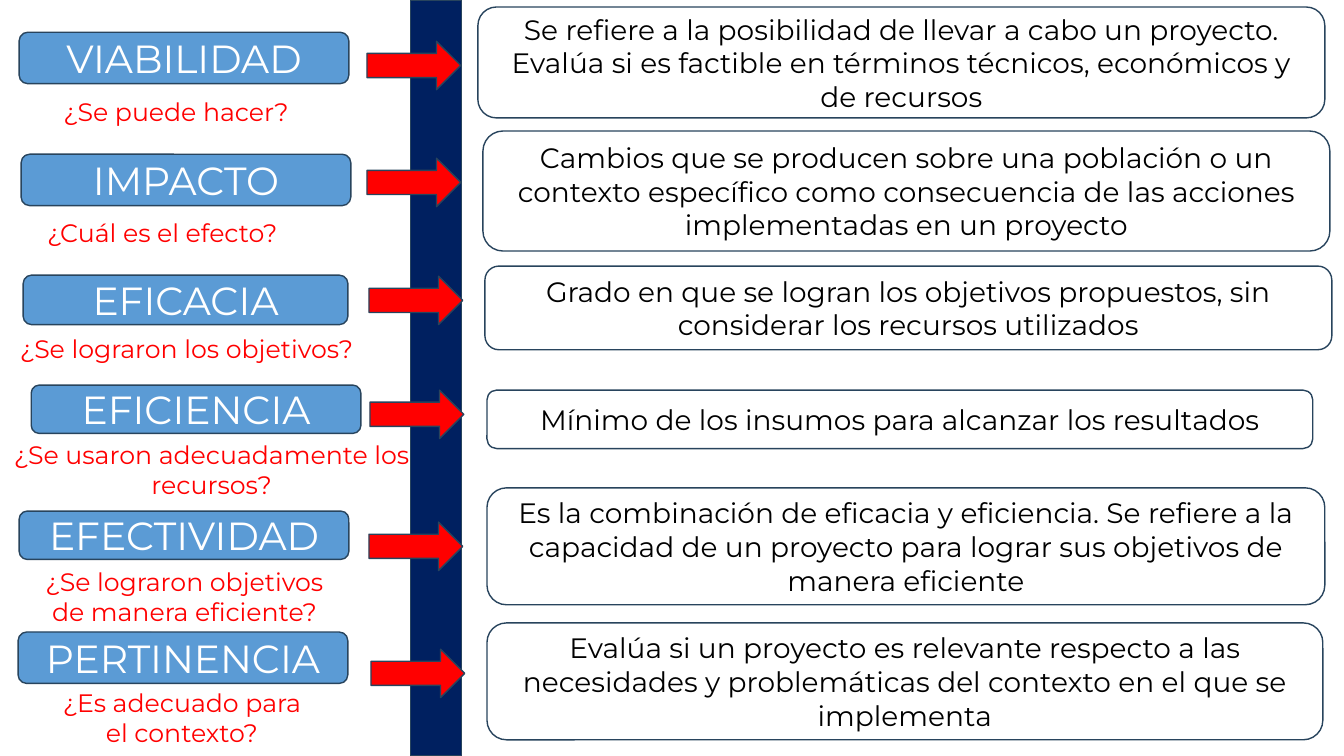
from dataclasses import dataclass

from pptx import Presentation
from pptx.dml.color import RGBColor
from pptx.enum import shapes, text
from pptx.util import Inches, Pt

CENTER = text.PP_ALIGN.CENTER
LEFT = text.PP_ALIGN.LEFT

CRITERIA = [
    {
        "name": ("VIABILIDAD", (0.19, 0.32, 3.27, 0.51)),
        "question": ("¿Se puede hacer?", (0.53, 0.91, 2.71, 0.4), LEFT),
        "meaning": (
            "Se refiere a la posibilidad de llevar a cabo un proyecto. "
            "Evalúa si es factible en términos técnicos, económicos y de recursos",
            (4.74, 0.07, 8.4, 1.1),
        ),
        "arrow": (3.64, 0.41),
    },
    {
        "name": ("IMPACTO", (0.21, 1.53, 3.27, 0.51)),
        "question": ("¿Cuál es el efecto?", (0.37, 2.11, 2.88, 0.4), LEFT),
        "meaning": (
            "Cambios que se producen sobre una población o un contexto específico "
            "como consecuencia de las acciones implementadas en un proyecto",
            (4.79, 1.3, 8.4, 1.19),
        ),
        "arrow": (3.64, 1.57),
    },
    {
        "name": ("EFICACIA", (0.23, 2.73, 3.22, 0.49)),
        "question": ("¿Se lograron los objetivos?", (0.1, 3.26, 3.97, 0.4), LEFT),
        "meaning": (
            "Grado en que se logran los objetivos propuestos, "
            "sin considerar los recursos utilizados",
            (4.81, 2.64, 8.4, 0.83),
        ),
        "arrow": (3.66, 2.74),
    },
    {
        "name": ("EFICIENCIA", (0.31, 3.82, 3.27, 0.48)),
        "question": ("¿Se usaron adecuadamente los recursos?", (0, 4.31, 4.2, 0.71), CENTER),
        "meaning": (
            "Mínimo de los insumos para alcanzar los resultados",
            (4.83, 3.87, 8.19, 0.58),
        ),
        "arrow": (3.67, 3.87),
    },
    {
        "name": ("EFECTIVIDAD", (0.19, 5.07, 3.27, 0.48)),
        "question": ("¿Se lograron objetivos de manera eficiente?", (0.2, 5.57, 3.26, 0.71), CENTER),
        "meaning": (
            "Es la combinación de eficacia y eficiencia. Se refiere a la capacidad "
            "de un proyecto para lograr sus objetivos de manera eficiente",
            (4.83, 4.84, 8.31, 1.16),
        ),
        "arrow": (3.66, 5.18),
    },
    {
        "name": ("PERTINENCIA", (0.18, 6.27, 3.27, 0.51)),
        "question": ("¿Es adecuado para el contexto?", (0.43, 6.77, 2.75, 0.71), CENTER),
        "meaning": (
            "Evalúa si un proyecto es relevante respecto a las necesidades "
            "y problemáticas del contexto en el que se implementa",
            (4.83, 6.18, 8.29, 1.16),
        ),
        "arrow": (3.68, 6.44),
    },
]
ARROW_SIZE = (0.93, 0.48)
BAND = (4.07, 0, 0.51, 7.5)


@dataclass(frozen=True)
class Theme:
    font: str = "Montserrat"
    navy: str = "002060"
    blue: str = "5B9BD5"
    red: str = "FF0000"
    outline: str = "28445D"
    white: str = "FFFFFF"
    black: str = "000000"
    name_size: int = 28
    meaning_size: int = 20
    question_size: int = 18


THEME = Theme()


def write(shape, content, size, color, alignment=CENTER):
    shape.text_frame.word_wrap = True
    paragraph = shape.text_frame.paragraphs[0]
    paragraph.alignment = alignment
    run = paragraph.add_run()
    run.text = content
    run.font.name = THEME.font
    run.font.size = Pt(size)
    run.font.color.rgb = RGBColor.from_string(color)


def add_preset(slide, preset, box, fill=None):
    shape = slide.shapes.add_shape(preset, *map(Inches, box))
    shape.shadow.inherit = False
    if fill:
        shape.fill.solid()
        shape.fill.fore_color.rgb = RGBColor.from_string(fill)
    else:
        shape.fill.background()
    shape.line.color.rgb = RGBColor.from_string(THEME.outline)
    shape.line.width = Pt(1)
    shape.text_frame.vertical_anchor = text.MSO_ANCHOR.MIDDLE
    return shape


def add_criterion(slide, criterion):
    preset = shapes.MSO_SHAPE
    name, name_box = criterion["name"]
    name_shape = add_preset(slide, preset.ROUNDED_RECTANGLE, name_box, THEME.blue)
    write(name_shape, name, THEME.name_size, THEME.white)

    meaning, meaning_box = criterion["meaning"]
    meaning_shape = add_preset(slide, preset.ROUNDED_RECTANGLE, meaning_box)
    write(meaning_shape, meaning, THEME.meaning_size, THEME.black)

    add_preset(slide, preset.RIGHT_ARROW, criterion["arrow"] + ARROW_SIZE, THEME.red)

    question, question_box, alignment = criterion["question"]
    question_shape = slide.shapes.add_textbox(*map(Inches, question_box))
    write(question_shape, question, THEME.question_size, THEME.red, alignment)


def main():
    presentation = Presentation()
    presentation.slide_width = Inches(13.33)
    presentation.slide_height = Inches(7.5)
    slide = presentation.slides.add_slide(presentation.slide_layouts[6])
    add_preset(slide, shapes.MSO_SHAPE.RECTANGLE, BAND, THEME.navy)
    for criterion in CRITERIA:
        add_criterion(slide, criterion)
    presentation.save("out.pptx")


if __name__ == "__main__":
    main()
